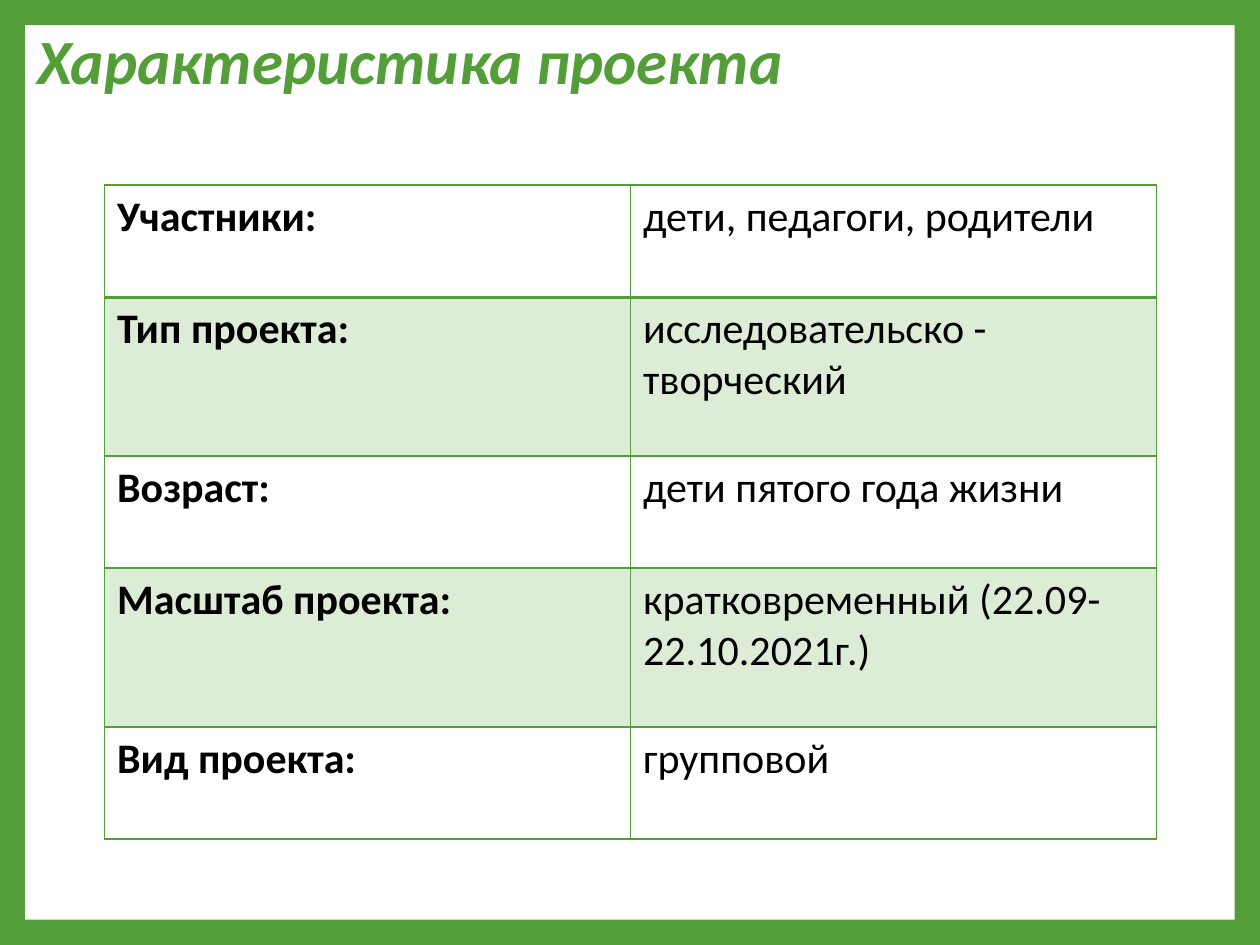
from lxml import etree
from pptx import Presentation
from pptx.dml.color import RGBColor
from pptx.enum.shapes import MSO_SHAPE
from pptx.enum.text import MSO_ANCHOR
from pptx.oxml.ns import qn
from pptx.util import Inches, Pt

RECTANGLE = MSO_SHAPE.RECTANGLE
MIDDLE = MSO_ANCHOR.MIDDLE

GREEN = RGBColor(0x54, 0x9E, 0x39)
PALE_GREEN = RGBColor(0xDD, 0xEC, 0xD7)
WHITE = RGBColor(0xFF, 0xFF, 0xFF)
BLACK = RGBColor(0x00, 0x00, 0x00)
FONT = "Calibri"

SHORT_ROW, TALL_ROW = 0.89, 1.26
CHARACTERISTICS = [
    ("Участники:", "дети, педагоги, родители", SHORT_ROW),
    ("Тип проекта:", "исследовательско - творческий", TALL_ROW),
    ("Возраст:", "дети пятого года жизни", SHORT_ROW),
    ("Масштаб проекта:", "кратковременный (22.09-22.10.2021г.)", TALL_ROW),
    ("Вид проекта:", "групповой", SHORT_ROW),
]


def write_text(text_frame, text, size=24, color=BLACK, bold=False, italic=False,
               line_spacing=None):
    paragraph = text_frame.paragraphs[0]
    paragraph.line_spacing = line_spacing
    run = paragraph.add_run()
    run.text = text
    font = run.font
    font.name, font.size = FONT, Pt(size)
    font.bold, font.italic = bold, italic
    font.color.rgb = color


def add_frame(slide, left, top, width, height):
    """Green background with a white panel that leaves a border around it."""
    background = slide.background.fill
    background.solid()
    background.fore_color.rgb = GREEN
    panel = slide.shapes.add_shape(RECTANGLE, Inches(left), Inches(top),
                                   Inches(width), Inches(height))
    panel.shadow.inherit = False
    panel.fill.solid()
    panel.fill.fore_color.rgb = WHITE
    panel.line.fill.background()


def add_title(slide, text, left, top, width, height):
    title = slide.shapes.add_textbox(Inches(left), Inches(top),
                                     Inches(width), Inches(height))
    title.text_frame.word_wrap = True
    title.text_frame.vertical_anchor = MIDDLE
    write_text(title.text_frame, text, size=36, color=GREEN, bold=True,
               italic=True, line_spacing=0.8)


def set_borders(cell, **widths):
    """Draw green borders; widths maps L, R, T and B to points."""
    properties = cell._tc.get_or_add_tcPr()
    for side, width in widths.items():
        line = etree.SubElement(properties, qn(f"a:ln{side}"), w=str(Pt(width)))
        fill = etree.SubElement(line, qn("a:solidFill"))
        etree.SubElement(fill, qn("a:srgbClr"), val=str(GREEN))


def add_characteristics_table(slide, rows, left, top, width):
    height = sum(row_height for _, _, row_height in rows)
    table = slide.shapes.add_table(len(rows), 2, Inches(left), Inches(top),
                                   Inches(width), Inches(height)).table
    table.first_row = table.horz_banding = False
    for column in table.columns:
        column.width = Inches(width / 2)
    for row_index, (label, value, row_height) in enumerate(rows):
        table.rows[row_index].height = Inches(row_height)
        for column_index, text in enumerate((label, value)):
            cell = table.cell(row_index, column_index)
            write_text(cell.text_frame, text, bold=column_index == 0)
            set_borders(cell, L=1, R=1,
                        T=2 if row_index == 1 else 1,
                        B=2 if row_index == 0 else 1)
            if row_index % 2:
                cell.fill.solid()
                cell.fill.fore_color.rgb = PALE_GREEN
            else:
                cell.fill.background()


def main():
    presentation = Presentation()
    presentation.slide_width, presentation.slide_height = Inches(10), Inches(7.5)
    slide = presentation.slides.add_slide(presentation.slide_layouts[6])
    add_frame(slide, 0.2, 0.2, 9.6, 7.1)
    add_title(slide, "Характеристика проекта", 0.2, 0.21, 9.61, 0.63)
    add_characteristics_table(slide, CHARACTERISTICS, 0.83, 1.47, 8.35)
    presentation.save("out.pptx")


if __name__ == "__main__":
    main()
